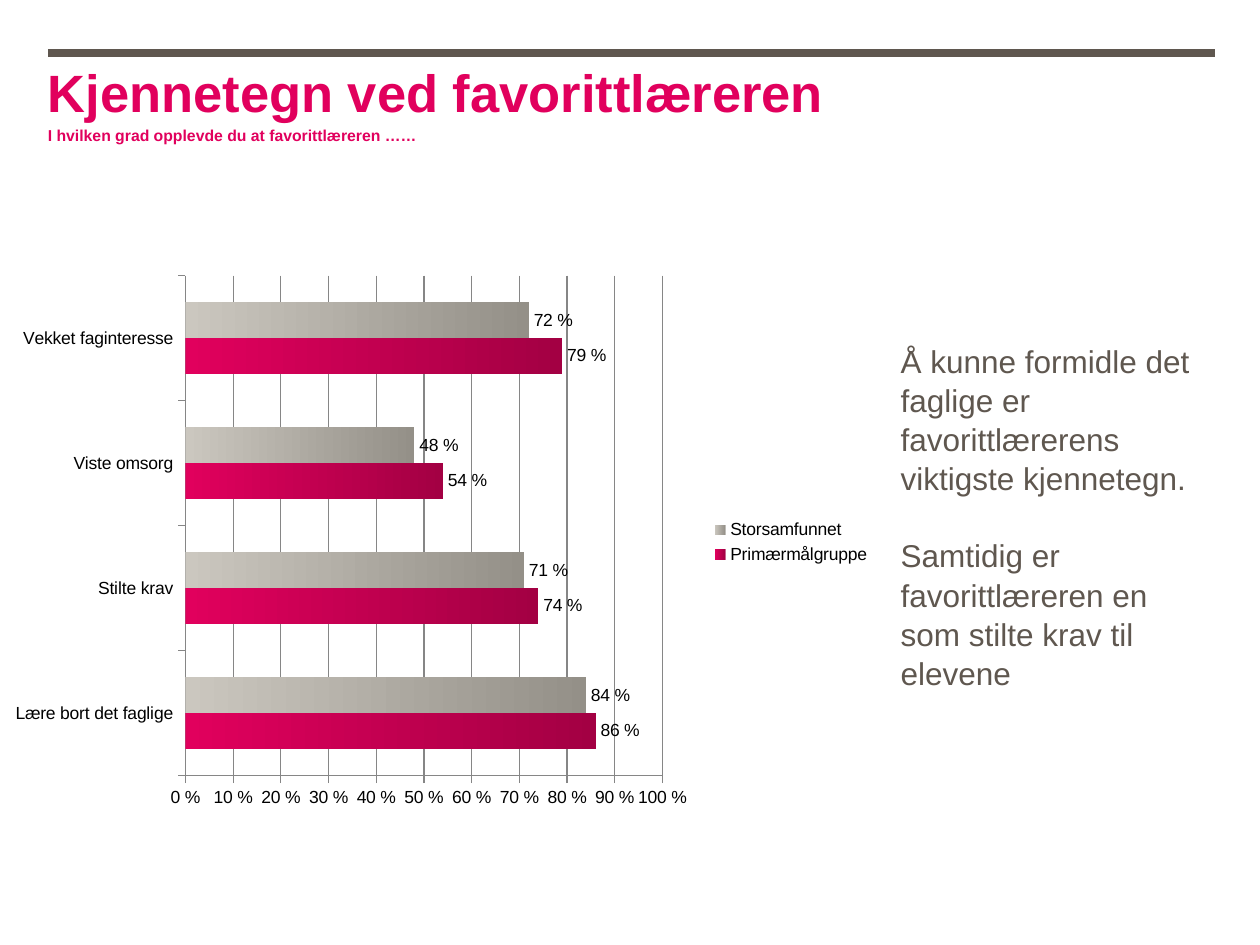
from lxml.etree import SubElement
from pptx import Presentation
from pptx.chart.data import CategoryChartData
from pptx.dml.color import RGBColor
from pptx.enum.chart import XL_CHART_TYPE, XL_LABEL_POSITION, XL_LEGEND_POSITION, XL_TICK_MARK
from pptx.enum.shapes import MSO_CONNECTOR
from pptx.oxml.ns import qn
from pptx.util import Inches, Pt

PINK = RGBColor(0xE1, 0x00, 0x5D)
DARK_PINK = RGBColor(0xA3, 0x00, 0x43)
SAND = RGBColor(0xCB, 0xC7, 0xBF)
DARK_SAND = RGBColor(0x94, 0x90, 0x88)
BROWN = RGBColor(0x5F, 0x57, 0x4F)
GRID_GREY = RGBColor(0x86, 0x86, 0x86)
BLACK = RGBColor(0, 0, 0)
PERCENT = r"0\ %"

prs = Presentation()
prs.slide_width, prs.slide_height = Inches(10), Inches(7.5)
slide = prs.slides.add_slide(prs.slide_layouts[6])
LEFT_MARGIN = 0.38


def style(font, size, color, bold=False):
    font.color.rgb = color
    for attribute, value in {"name": "Arial", "size": Pt(size), "bold": bold}.items():
        setattr(font, attribute, value)


def add_frame(left, top, width, height, margins):
    """Add a wrapping text box, margins as (horizontal, vertical), and return its frame."""
    frame = slide.shapes.add_textbox(*map(Inches, (left, top, width, height))).text_frame
    frame.word_wrap = True
    frame.margin_left = frame.margin_right = Inches(margins[0])
    frame.margin_top = frame.margin_bottom = Inches(margins[1])
    return frame


# Rule above the heading
rule = slide.shapes.add_connector(
    MSO_CONNECTOR.STRAIGHT, *map(Inches, (LEFT_MARGIN, 0.42, 9.64, 0.42)))
rule.line.color.rgb = BROWN
rule.line.width = Pt(4.5)
SubElement(rule._element.spPr, qn("a:effectLst"))

# Heading with the survey question on its second line
heading = add_frame(LEFT_MARGIN, 0.43, 7.45, 1.11, (0, 0)).paragraphs[0]
heading.line_spacing = 1.1
title = heading.add_run()
title.text = "Kjennetegn ved favorittlæreren"
style(title.font, 30, PINK, bold=True)
heading.add_line_break()
question = heading.add_run()
question.text = "I hvilken grad opplevde du at favorittlæreren ……"
style(question.font, 9, PINK, bold=True)

# Share of respondents per trait
ratings = CategoryChartData(number_format=PERCENT)
ratings.categories = ["Lære bort det faglige", "Stilte krav", "Viste omsorg", "Vekket faginteresse"]
ratings.add_series("Primærmålgruppe", (0.86, 0.74, 0.54, 0.79))
ratings.add_series("Storsamfunnet", (0.84, 0.71, 0.48, 0.72))
chart = slide.shapes.add_chart(
    XL_CHART_TYPE.BAR_CLUSTERED, *map(Inches, (0, 2.1, 7.01, 4.41)), ratings).chart
style(chart.font, 10, BLACK)
chart.has_title = False
chart.has_legend = True
chart.legend.position = XL_LEGEND_POSITION.RIGHT
chart.legend.include_in_layout = False

shares = chart.value_axis
for attribute, value in {"minimum_scale": 0, "maximum_scale": 1, "major_unit": 0.1,
                         "has_major_gridlines": True}.items():
    setattr(shares, attribute, value)
shares.tick_labels.number_format = PERCENT
shares.tick_labels.number_format_is_linked = False
for axis in (shares, chart.category_axis):
    axis.major_tick_mark = XL_TICK_MARK.OUTSIDE
for line in (shares.format.line, chart.category_axis.format.line, shares.major_gridlines.format.line):
    line.color.rgb = GRID_GREY
    line.width = Pt(0.75)

bars = chart.plots[0]
bars.gap_width, bars.overlap, bars.vary_by_categories = 150, 0, False
for series, shades in zip(bars.series, ((PINK, DARK_PINK), (SAND, DARK_SAND))):
    fill = series.format.fill
    fill.gradient()
    fill.gradient_angle = 0
    for stop, shade in zip(fill.gradient_stops, shades):
        stop.color.rgb = shade
    labels = series.data_labels
    for attribute, value in {"show_value": True, "number_format": PERCENT,
                             "number_format_is_linked": False,
                             "position": XL_LABEL_POSITION.OUTSIDE_END}.items():
        setattr(labels, attribute, value)
    style(labels.font, 10, BLACK)

# Inner plot area as shares of the chart
plot_area = chart._chartSpace.chart.plotArea
for old_layout in plot_area.findall(qn("c:layout")):
    plot_area.remove(old_layout)
layout = SubElement(plot_area, qn("c:layout"))
plot_area.insert(0, layout)
manual = SubElement(layout, qn("c:manualLayout"))
for tag, value in {"layoutTarget": "inner", "xMode": "edge", "yMode": "edge",
                   "x": 0.21, "y": 0.02, "w": 0.54, "h": 0.9}.items():
    SubElement(manual, qn(f"c:{tag}")).set("val", str(value))

# Findings beside the chart
findings = add_frame(7.05, 2.65, 2.68, 2.83, (0.1, 0.05))
for index, finding in enumerate((
        "Å kunne formidle det faglige er favorittlærerens viktigste kjennetegn.",
        "Samtidig er favorittlæreren en som stilte krav til elevene")):
    paragraph = findings.add_paragraph() if index else findings.paragraphs[0]
    paragraph.line_spacing = 1.04
    paragraph.space_before = Pt(21.6 * index)
    run = paragraph.add_run()
    run.text = finding
    style(run.font, 18, BROWN)

prs.save("out.pptx")
